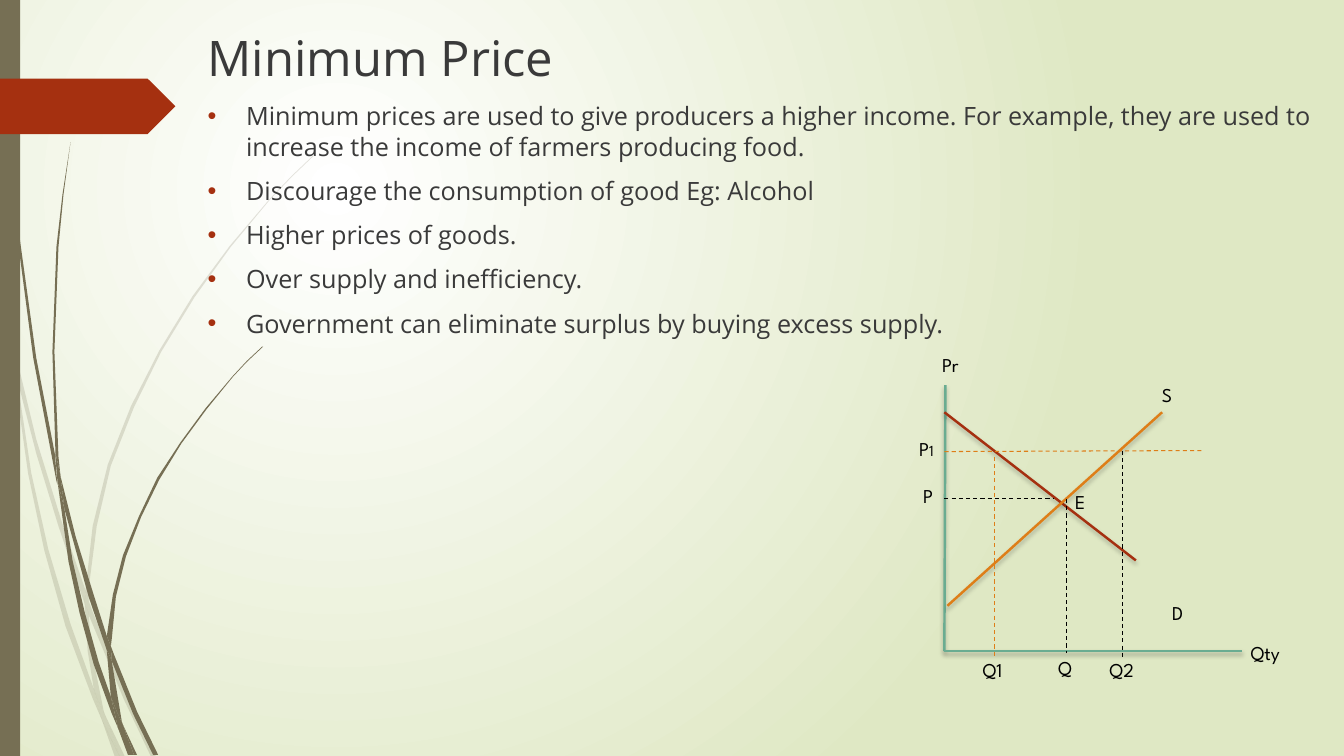
from dataclasses import dataclass

from pptx import Presentation
from pptx.dml.color import RGBColor
from pptx.enum.dml import MSO_LINE
from pptx.enum.shapes import MSO_CONNECTOR, MSO_SHAPE
from pptx.enum.text import MSO_ANCHOR, MSO_AUTO_SIZE, PP_ALIGN
from pptx.oxml import parse_xml
from pptx.oxml.ns import nsdecls, qn
from pptx.util import Cm, Pt


@dataclass(frozen=True)
class Theme:
    bark: str = "766F54"
    brick: str = "A53010"
    ink: str = "3A3A3A"
    black: str = "000000"
    teal: str = "6AAC91"
    orange: str = "DE7E18"
    glow: str = "FFFFFF"
    meadow: str = "DFE8C4"
    text_font: str = "Open Sans"
    chart_font: str = "League Spartan"
    title_size: int = 35
    bullet_size: int = 18
    label_size: int = 14
    index_size: int = 11
    curve_width: float = 1.75
    guide_width: float = 0.75


THEME = Theme()
TITLE = "Minimum Price"
BULLETS = [
    "Minimum prices are used to give producers a higher income. For example, "
    "they are used to increase the income of farmers producing food.",
    "Discourage the consumption of good Eg: Alcohol",
    "Higher prices of goods.",
    "Over supply and inefficiency.",
    "Government can eliminate surplus by buying excess supply.",
]
FAINT_BLADES = [
    [(0.11, 3.5), (0.09, 3.22), (0, 2.82), (0, 2.99), (0.1, 3.44)],
    [(0.58, 5.22), (0.84, 5.99), (0.85, 5.86), (0.62, 5.2), (0.36, 4.36), (0.14, 3.45),
     (0.17, 3.76), (0.36, 4.5)],
    [(0.92, 6.07), (0.88, 5.96), (0.88, 6.1), (1.23, 6.94), (1.5, 7.51), (1.55, 7.51), (1.27, 6.92)],
    [(1.19, 7.51), (1.24, 7.51), (1.05, 7.11)],
    [(0.93, 6.83), (0.7, 6.19), (0.48, 5.45), (0.31, 4.69), (0.17, 3.76), (0.11, 3.5), (0.28, 4.7),
     (0.44, 5.46), (0.65, 6.21), (0.92, 6.93), (1.01, 7.14), (0.99, 7.07)],
    [(0.84, 5.99), (0.87, 6.46), (0.93, 6.83), (0.96, 6.92), (1.05, 7.11), (1.03, 7.06),
     (0.91, 6.46), (0.88, 6.1), (0.88, 6.08)],
    [(0.88, 5.84), (0.96, 5.22), (1.1, 4.62), (1.33, 4.04), (1.6, 3.49), (1.93, 2.95), (2.29, 2.45),
     (2.68, 1.98), (2.9, 1.75), (3.12, 1.54), (3.12, 1.53), (2.89, 1.75), (2.68, 1.97), (2.28, 2.44),
     (1.91, 2.94), (1.58, 3.48), (1.3, 4.03), (1.07, 4.61), (0.92, 5.22), (0.85, 5.84),
     (0.85, 5.86), (0.88, 5.96)],
    [(1.01, 7.14), (1.14, 7.51), (1.19, 7.51)],
    [(0.88, 6.08), (0.88, 6.1), (0.88, 5.96), (0.85, 5.86), (0.84, 5.99)],
    [(0.96, 6.92), (0.93, 6.83), (0.99, 7.07), (1.01, 7.14), (1.19, 7.51), (1.05, 7.11)],
]
DARK_BLADES = [
    [(0.07, 1.1), (0.17, 2.33), (0.33, 3.55), (0.56, 4.77), (0.57, 4.81), (0.55, 4.57), (0.55, 4.53),
     (0.36, 3.55), (0.19, 2.32), (0.08, 1.09), (0.05, 0.48), (0.04, 0), (0.03, 0), (0.04, 0.48)],
    [(0.88, 5.92), (1.06, 6.45), (1.06, 6.33), (1.06, 6.31), (0.93, 5.9), (0.75, 5.32), (0.6, 4.72),
     (0.64, 5.05)],
    [(1.13, 6.49), (1.1, 6.41), (1.11, 6.56), (1.32, 7.08), (1.52, 7.49), (1.57, 7.49), (1.36, 7.06)],
    [(1.1, 6.91), (0.98, 6.57), (0.84, 6.07), (0.72, 5.56), (0.64, 5.05), (0.57, 4.77), (0.68, 5.57),
     (0.79, 6.08), (0.93, 6.59), (1.11, 7.08), (1.17, 7.22), (1.16, 7.17)],
    [(0.6, 4.72), (0.58, 4.53), (0.54, 3.49), (0.58, 2.45), (0.63, 1.93), (0.7, 1.41), (0.62, 1.93),
     (0.56, 2.45), (0.52, 3.49), (0.55, 4.49)],
    [(1.33, 7.49), (1.36, 7.49), (1.22, 7.19)],
    [(0.57, 4.77), (0.64, 5.05), (0.6, 4.72), (0.55, 4.49), (0.55, 4.53)],
    [(1.11, 6.33), (1.15, 5.92), (1.25, 5.52), (1.4, 5.13), (1.58, 4.76), (1.8, 4.4), (2.05, 4.06),
     (2.31, 3.74), (2.45, 3.59), (2.61, 3.44), (2.6, 3.44), (2.45, 3.58), (2.31, 3.73), (2.04, 4.05),
     (1.79, 4.39), (1.56, 4.74), (1.38, 5.12), (1.22, 5.51), (1.12, 5.9), (1.06, 6.31), (1.1, 6.41)],
    [(1.17, 7.22), (1.27, 7.49), (1.31, 7.49)],
    [(1.06, 6.45), (1.1, 6.91), (1.16, 7.06), (1.22, 7.19), (1.21, 7.16), (1.11, 6.56), (1.09, 6.51)],
    [(1.06, 6.45), (1.09, 6.51), (1.11, 6.56), (1.1, 6.41), (1.06, 6.31)],
    [(1.16, 7.06), (1.1, 6.91), (1.16, 7.17), (1.17, 7.22), (1.3, 7.49), (1.33, 7.49), (1.22, 7.19)],
]
CURVES = [
    ((9.38, 3.82), (9.37, 6.46), THEME.teal),
    ((9.37, 6.46), (12.32, 6.46), THEME.teal),
    ((9.37, 4.09), (11.27, 5.56), THEME.brick),
    ((9.4, 6.01), (11.53, 4.09), THEME.orange),
]
GUIDES = [
    ((11.92, 4.47), (9.35, 4.48), THEME.orange),
    ((9.87, 4.53), (9.87, 6.53), THEME.orange),
    ((9.37, 4.95), (10.46, 4.95), THEME.black),
    ((11.14, 4.47), (11.14, 6.53), THEME.black),
    ((10.58, 4.95), (10.58, 6.48), THEME.black),
]
LABELS = [
    (["Pr"], 9.25, 3.45, 0.81), (["P"], 9.06, 4.75, 0.81), (["D"], 11.53, 5.91, 0.81),
    (["Q2"], 10.91, 6.48, 0.54), (["P", "1"], 9.02, 4.29, 0.44), (["S"], 11.43, 3.75, 0.81),
    (["Q1"], 9.65, 6.48, 0.81), (["Q"], 10.4, 6.46, 0.41), (["E"], 10.57, 4.81, 0.26),
    (["Qty"], 12.31, 6.31, 0.81),
]


def lengths(*inches):
    return [Cm(value * 2.54) for value in inches]


def style_font(font, name, size, color):
    font.name = name
    font.size = Pt(size)
    font.color.rgb = RGBColor.from_string(color)


def paint(shape, color):
    shape.shadow.inherit = False
    shape.fill.solid()
    shape.fill.fore_color.rgb = RGBColor.from_string(color)
    shape.line.fill.background()


def paint_background(page):
    page.background.fill.solid()
    solid = page.element.find(".//" + qn("p:bgPr")).find(qn("a:solidFill"))
    solid.getparent().replace(solid, parse_xml(
        f'<a:gradFill {nsdecls("a")} rotWithShape="1"><a:gsLst>'
        f'<a:gs pos="0"><a:srgbClr val="{THEME.glow}"/></a:gs>'
        f'<a:gs pos="100000"><a:srgbClr val="{THEME.meadow}"/></a:gs></a:gsLst>'
        '<a:path path="circle"><a:fillToRect l="50000" t="50000" r="100000" b="100000"/></a:path>'
        '</a:gradFill>'))


def add_grass(page, blades, opacity):
    tuft = page.shapes.add_group_shape()
    for blade in blades:
        outline = [lengths(*point) for point in blade]
        builder = tuft.shapes.build_freeform(*outline[0])
        builder.add_line_segments(outline[1:], close=True)
        shape = builder.convert_to_shape()
        paint(shape, THEME.bark)
        if opacity < 100:
            color = shape.element.spPr.find(qn("a:solidFill"))[0]
            color.append(parse_xml(f'<a:alpha {nsdecls("a")} val="{opacity * 1000}"/>'))


def add_line(page, start, end, color, width, shadow=""):
    line = page.shapes.add_connector(MSO_CONNECTOR.STRAIGHT, *lengths(*start, *end))
    line.line.color.rgb = RGBColor.from_string(color)
    line.line.width = Pt(width)
    if not shadow:
        line.line.dash_style = MSO_LINE.DASH
    line.element.spPr.append(parse_xml(f'<a:effectLst {nsdecls("a")}>{shadow}</a:effectLst>'))


def clear_margins(frame):
    frame.margin_left = frame.margin_right = frame.margin_top = frame.margin_bottom = 0
    frame.word_wrap = True
    frame.vertical_anchor = MSO_ANCHOR.TOP
    frame.auto_size = MSO_AUTO_SIZE.NONE


def add_title(page):
    title = page.shapes.title
    title.left, title.top, title.width, title.height = lengths(2.06, 0.27, 11.03, 0.7)
    title.text_frame.text = TITLE
    clear_margins(title.text_frame)
    para = title.text_frame.paragraphs[0]
    para.alignment = PP_ALIGN.LEFT
    style_font(para.runs[0].font, THEME.text_font, THEME.title_size, THEME.ink)


def add_bullets(page):
    frame = page.shapes.add_textbox(*lengths(2.06, 1, 11.03, 2.4)).text_frame
    frame.text = "\n".join(BULLETS)
    clear_margins(frame)
    hang = Cm(0.97)
    for index, para in enumerate(frame.paragraphs):
        para.space_before = Pt(10 if index else 0)
        style_font(para.runs[0].font, THEME.text_font, THEME.bullet_size, THEME.ink)
        props = para._p.get_or_add_pPr()
        props.set("marL", str(hang))
        props.set("indent", str(-hang))
        for mark in (f'<a:buClr {nsdecls("a")}><a:srgbClr val="{THEME.brick}"/></a:buClr>',
                     f'<a:buFont {nsdecls("a")} typeface="Arial"/>',
                     f'<a:buChar {nsdecls("a")} char="•"/>'):
            props.append(parse_xml(mark))


def add_label(page, parts, left, top, width):
    frame = page.shapes.add_textbox(*lengths(left, top, width, 0.34)).text_frame
    frame.word_wrap = True
    frame.auto_size = MSO_AUTO_SIZE.SHAPE_TO_FIT_TEXT
    for text, size in zip(parts, (THEME.label_size, THEME.index_size)):
        span = frame.paragraphs[0].add_run()
        span.text = text
        style_font(span.font, THEME.chart_font, size, THEME.black)


def main():
    deck = Presentation()
    deck.slide_width, deck.slide_height = Cm(33.87), Cm(19.05)
    page = deck.slides.add_slide(deck.slide_layouts[5])
    paint_background(page)
    add_grass(page, FAINT_BLADES, 20)
    add_grass(page, DARK_BLADES, 100)
    stem = page.shapes.add_shape(MSO_SHAPE.RECTANGLE, *lengths(0, 0, 0.2, 7.5))
    paint(stem, THEME.bark)
    arrow = page.shapes.add_shape(MSO_SHAPE.PENTAGON, *lengths(0, 0.78, 1.74, 0.55))
    paint(arrow, THEME.brick)
    add_title(page)
    add_bullets(page)
    shadow = (f'<a:outerShdw blurRad="{Pt(3)}" dist="{Pt(2)}" dir="5400000" rotWithShape="0">'
              f'<a:srgbClr val="{THEME.black}"><a:alpha val="25000"/></a:srgbClr></a:outerShdw>')
    for curve in CURVES:
        add_line(page, *curve, THEME.curve_width, shadow)
    for guide in GUIDES:
        add_line(page, *guide, THEME.guide_width)
    for label in LABELS:
        add_label(page, *label)
    deck.save("out.pptx")


if __name__ == "__main__":
    main()
